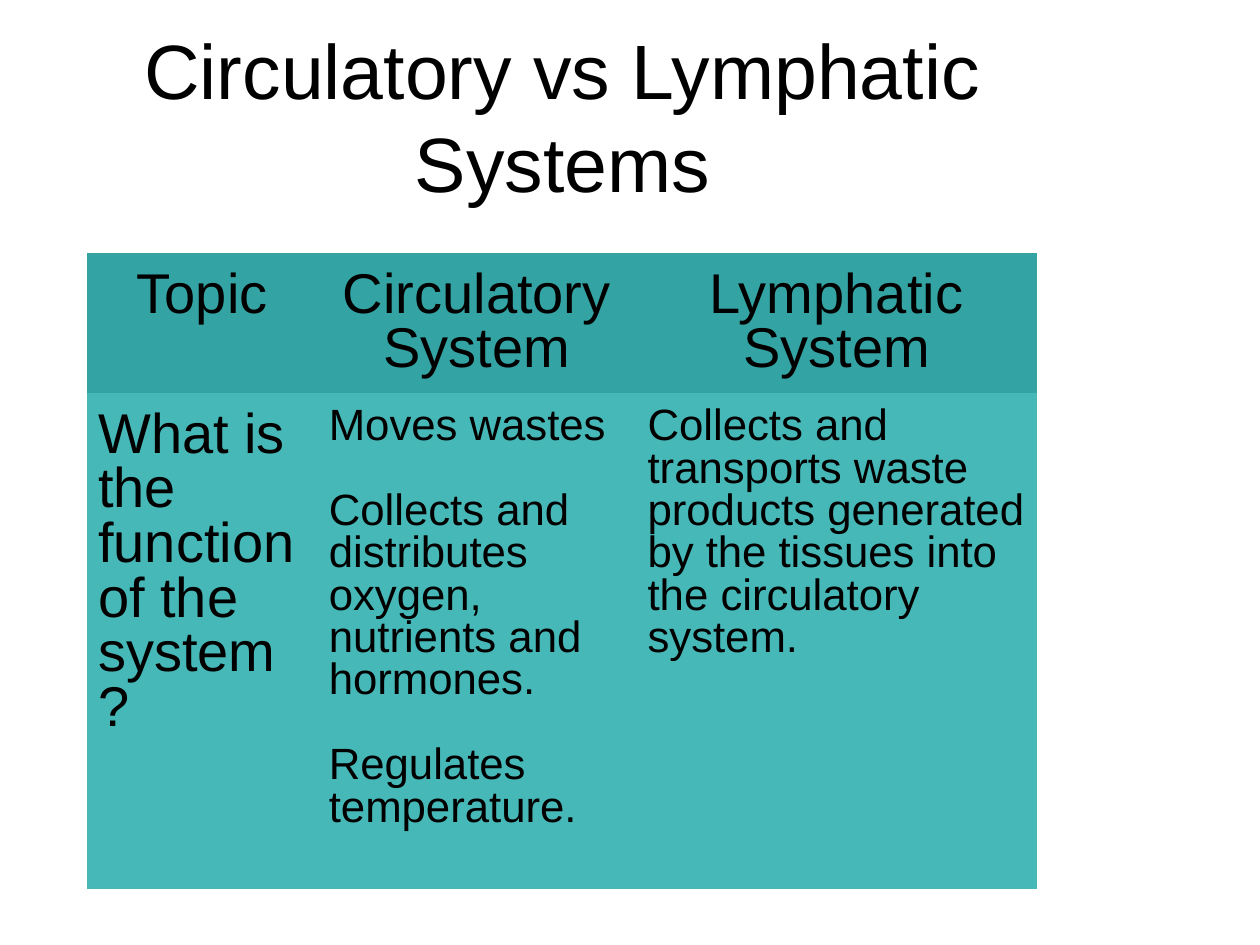
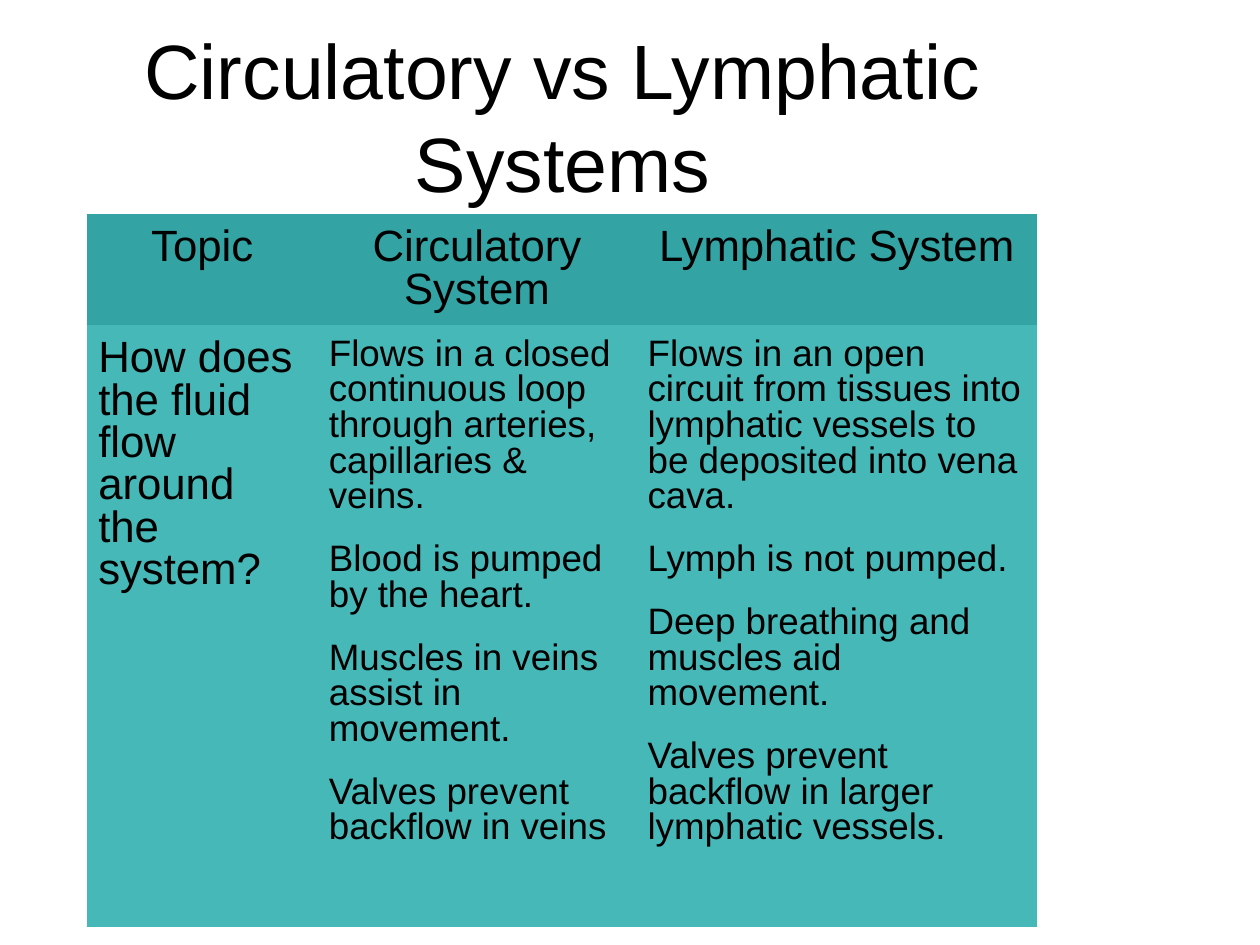
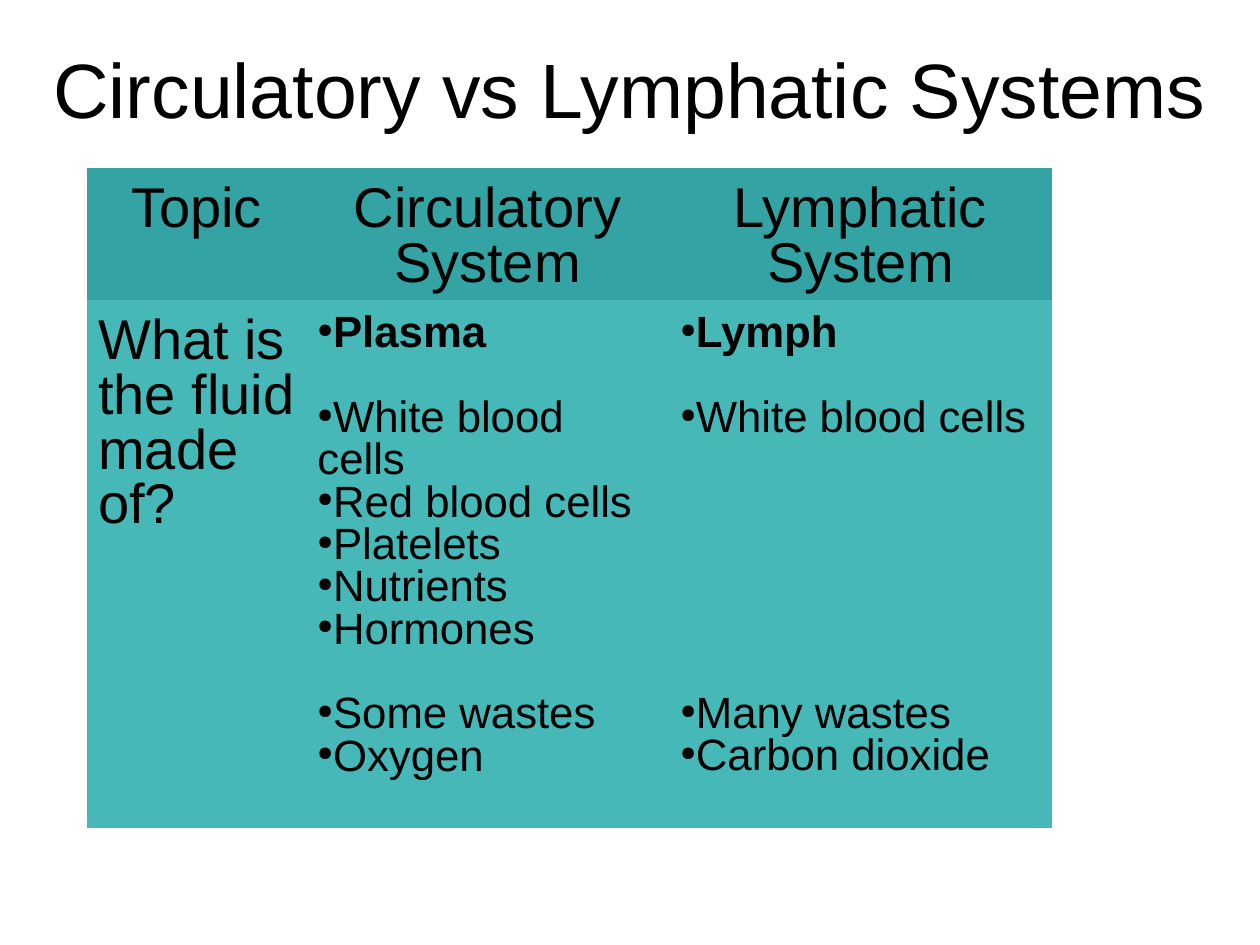
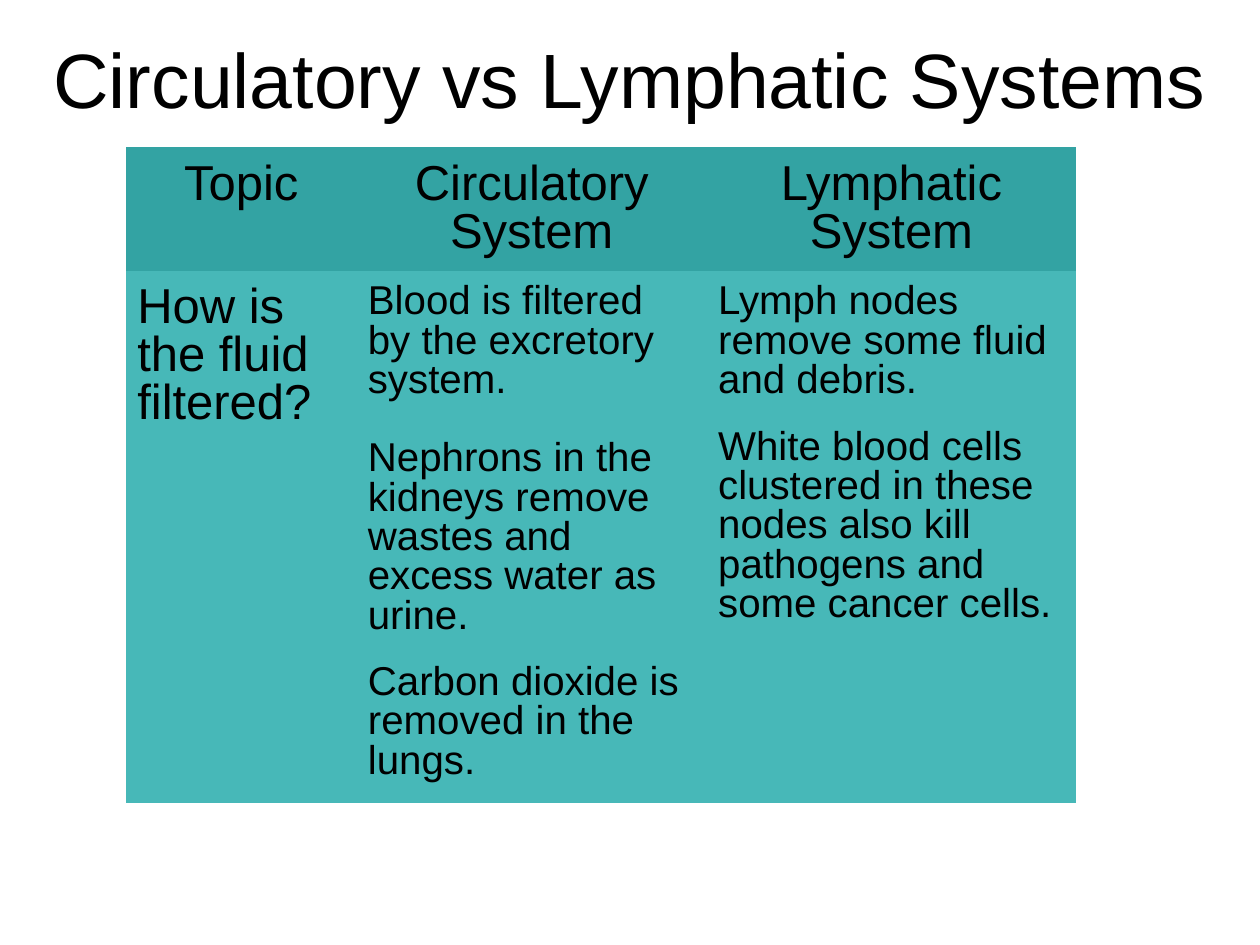
from lxml import etree
from pptx import Presentation
from pptx.dml.color import RGBColor
from pptx.enum.text import MSO_ANCHOR, MSO_AUTO_SIZE, PP_ALIGN
from pptx.oxml.ns import qn
from pptx.util import Inches, Pt

CENTER, LEFT = PP_ALIGN.CENTER, PP_ALIGN.LEFT
MIDDLE, TOP = MSO_ANCHOR.MIDDLE, MSO_ANCHOR.TOP
NO_FIT = MSO_AUTO_SIZE.NONE
TITLE_ONLY = 5

FONT = "Arial"
INK, WHITE = "000000", "FFFFFF"
HEADER_FILL, BODY_FILL = "33A3A3", "47B8B8"
TITLE = "Circulatory vs Lymphatic Systems"
HEADERS = ["Topic", "Circulatory System", "Lymphatic System"]
LINE_SPACING = 0.87
GAP_RATIO = 0.967

SLIDES = [
    dict(
        title_box=(0.36, 0.3, 8.21, 1.24), table_at=(0.69, 2.01),
        cols=[1.83, 2.53, 3.18], rows=[1.11, 3.94],
        head_size=32, head_top=0.13, body_size=25, body_top=0.11,
        question="What is the function of the system?",
        answers=[
            [("Moves wastes", {}),
             ("Collects and distributes oxygen, nutrients and hormones.", {"gap": 25}),
             ("Regulates temperature.", {"gap": 25})],
            [("Collects and transports waste products generated by the tissues "
              "into the circulatory system.", {})],
        ],
    ),
    dict(
        title_box=(0.36, 0.3, 8.21, 1.24), table_at=(0.69, 1.7),
        cols=[1.83, 2.53, 3.18], rows=[0.88, 4.78],
        head_size=25, head_top=0.11, body_size=21, body_top=0.1,
        question="How does the fluid flow around the system?",
        answers=[
            [("Flows in a closed continuous loop through arteries, capillaries & veins.", {}),
             ("Blood is pumped by the heart.", {"gap": 16}),
             ("Muscles in veins assist in movement.", {"gap": 16}),
             ("Valves prevent backflow in veins", {"gap": 16})],
            [("Flows in an open circuit from tissues into lymphatic vessels "
              "to be deposited into vena cava.", {}),
             ("Lymph is not pumped.", {"gap": 16}),
             ("Deep breathing and muscles aid movement.", {"gap": 16}),
             ("Valves prevent backflow in larger lymphatic vessels.", {"gap": 16})],
        ],
    ),
    dict(
        title_box=(0, 0.08, 10, 1.24), table_at=(0.69, 1.33),
        cols=[1.74, 2.88, 3.04], rows=[1.05, 4.19],
        head_size=32, head_top=0.13, body_size=25, body_top=0.11, bullet=True,
        question="What is the fluid made of?",
        answers=[
            [("Plasma", {"bold": True}),
             ("White blood cells", {"gap": 25}),
             ("Red blood cells", {}),
             ("Platelets", {}),
             ("Nutrients", {}),
             ("Hormones", {}),
             ("Some wastes", {"gap": 25}),
             ("Oxygen", {})],
            [("Lymph", {"bold": True}),
             ("White blood cells", {"gap": 25}),
             ("Many wastes", {"gap": 6 * 25}),
             ("Carbon dioxide", {})],
        ],
    ),
    dict(
        title_box=(0, 0, 10, 1.24), table_at=(1, 1.17),
        cols=[1.83, 2.78, 2.93], rows=[0.98, 4.22],
        head_size=28, head_top=0.12, body_size=23, body_top=0.1,
        question="How is the fluid filtered?",
        answers=[
            [("Blood is filtered by the excretory system.", {}),
             ("Nephrons in the kidneys remove wastes and excess water as urine.", {"gap": 23}),
             ("Carbon dioxide is removed in the lungs.", {"gap": 16})],
            [("Lymph nodes remove some fluid and debris.", {}),
             ("White blood cells clustered in these nodes also kill pathogens "
              "and some cancer cells.", {"gap": 16})],
        ],
    ),
]


def rgb(color):
    return RGBColor.from_string(color)


def add_bullet(p):
    pPr = p._p.get_or_add_pPr()
    color = etree.SubElement(pPr, qn("a:buClr"))
    etree.SubElement(color, qn("a:srgbClr"), val=INK)
    etree.SubElement(pPr, qn("a:buSzPct"), val="45000")
    etree.SubElement(pPr, qn("a:buChar"), char="●")


def write(p, text, size=25, align=LEFT, spacing=LINE_SPACING, gap=0, bold=False, bullet=False):
    p.alignment = align
    p.line_spacing = spacing
    p.space_before = Pt(round(gap * GAP_RATIO, 1))
    if bullet:
        add_bullet(p)
    r = p.add_run()
    r.text = text
    r.font.name, r.font.size, r.font.bold = FONT, Pt(size), bold
    r.font.color.rgb = rgb(INK)


def set_margins(box, left, top):
    box.margin_left = box.margin_right = Inches(left)
    box.margin_top, box.margin_bottom = Inches(top), Inches(0.05)


def set_title(slide, box):
    sp = slide.shapes.title
    sp.left, sp.top, sp.width, sp.height = map(Inches, box)
    tf = sp.text_frame
    tf.word_wrap, tf.auto_size, tf.vertical_anchor = True, NO_FIT, MIDDLE
    set_margins(tf, 0.1, 0.04)
    write(tf.paragraphs[0], TITLE, size=44, align=CENTER, spacing=1.0)


def set_borders(cell):
    tcPr = cell._tc.get_or_add_tcPr()
    for i, side in enumerate(("lnL", "lnR", "lnT", "lnB")):
        ln = etree.Element(qn(f"a:{side}"), w="381")
        fill = etree.SubElement(ln, qn("a:solidFill"))
        etree.SubElement(fill, qn("a:srgbClr"), val=WHITE)
        tcPr.insert(i, ln)


def fill_cell(cell, items, fill, top, **fmt):
    cell.fill.solid()
    cell.fill.fore_color.rgb = rgb(fill)
    cell.vertical_anchor = TOP
    set_margins(cell, 0.09, top)
    set_borders(cell)
    tf = cell.text_frame
    for i, (text, extra) in enumerate(items):
        p = tf.add_paragraph() if i else tf.paragraphs[0]
        write(p, text, **{**fmt, **extra})


def add_comparison(slide, data):
    cols, rows = data["cols"], data["rows"]
    frame = slide.shapes.add_table(len(rows), len(cols), *map(
        Inches, (*data["table_at"], sum(cols), sum(rows))))
    table = frame.table
    table.first_row = table.horz_banding = False
    for col, width in zip(table.columns, cols):
        col.width = Inches(width)
    for row, height in zip(table.rows, rows):
        row.height = Inches(height)
    head = dict(top=data["head_top"], size=data["head_size"])
    for c, text in enumerate(HEADERS):
        fill_cell(table.cell(0, c), [(text, {})], HEADER_FILL, align=CENTER, **head)
    fill_cell(table.cell(1, 0), [(data["question"], {})], BODY_FILL, **head)
    for c, items in enumerate(data["answers"], 1):
        fill_cell(table.cell(1, c), items, BODY_FILL, data["body_top"],
                  size=data["body_size"], bullet=data.get("bullet", False))


def main():
    prs = Presentation()
    prs.slide_width, prs.slide_height = Inches(10), Inches(7.5)
    for data in SLIDES:
        slide = prs.slides.add_slide(prs.slide_layouts[TITLE_ONLY])
        set_title(slide, data["title_box"])
        add_comparison(slide, data)
    prs.save("out.pptx")


if __name__ == "__main__":
    main()
